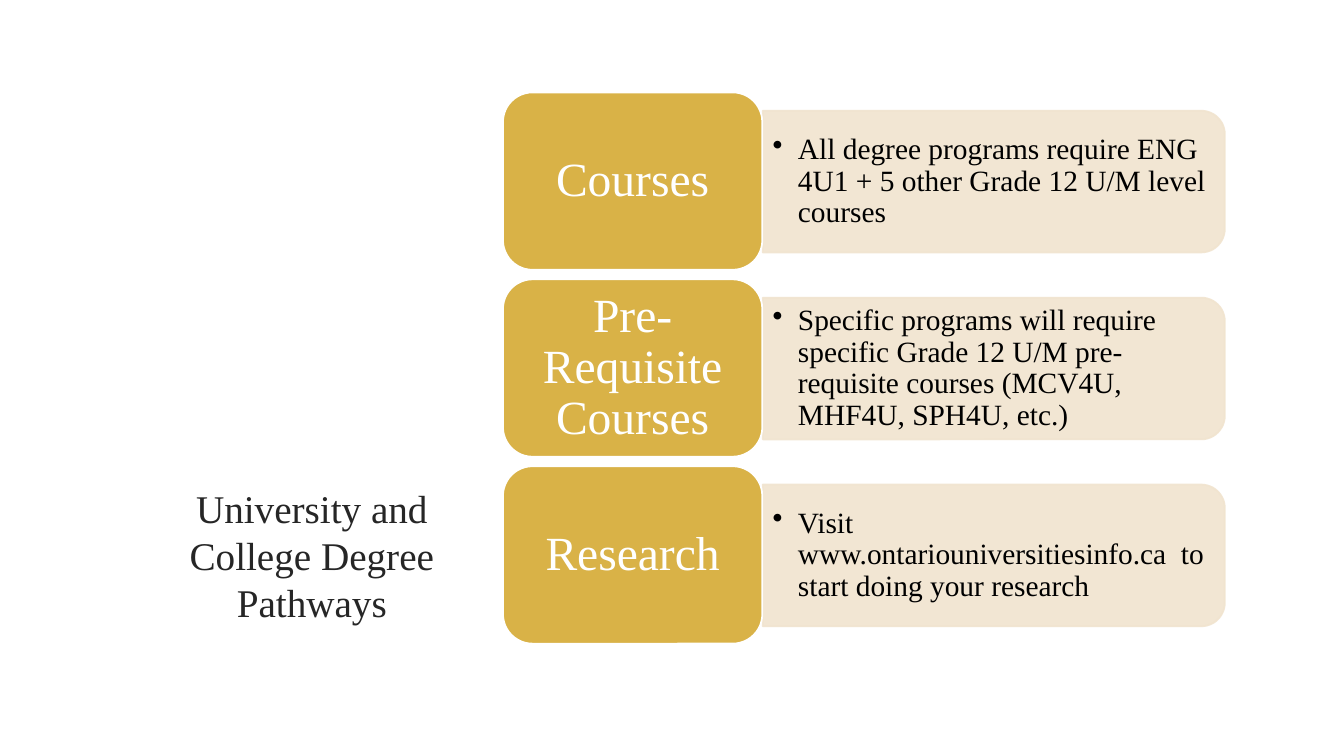
from lxml import etree
from pptx import Presentation, util as u
from pptx.dml.color import RGBColor
from pptx.enum import shapes, text
from pptx.oxml.ns import qn

PX = 9525
ROWS = [
    ("Courses", "All degree programs require ENG 4U1 + 5 other Grade 12 U/M level courses"),
    ("Pre-Requisite Courses", "Specific programs will require specific Grade 12 U/M pre-requisite "
                              "courses (MCV4U, MHF4U, SPH4U, etc.)"),
    ("Research", "Visit www.ontariouniversitiesinfo.ca  to start doing your research"),
]


def colour(value):
    return RGBColor.from_string(value)


class PathwaySlide:
    """Draws the parts of the pathways slide in one shared style."""

    font = "Times New Roman"
    gold, sand, white, ink, black = "D9B247", "F1E4CF", "FFFFFF", "262626", "000000"

    def __init__(self, slide):
        self.slide = slide

    def box(self, *place):
        return self.slide.shapes.add_textbox(*(n * PX for n in place))

    def shape(self, kind, fill, line, *place):
        shape = self.slide.shapes.add_shape(kind, *(n * PX for n in place))
        shape.shadow.inherit = False
        shape.fill.solid()
        shape.fill.fore_color.rgb = colour(fill)
        shape.line.color.rgb = colour(line)
        shape.line.width = u.Pt(1.25)
        return shape

    def put_text(self, shape, words, size, ink, anchor, align, insets, spacing=None, bullet=False):
        frame = shape.text_frame
        frame.text = words
        frame.word_wrap = True
        frame.vertical_anchor = anchor
        across, down = (n * PX for n in insets)
        frame.margin_left = frame.margin_right = across
        frame.margin_top = frame.margin_bottom = down
        paragraph = frame.paragraphs[0]
        paragraph.alignment = align
        if spacing:
            paragraph.line_spacing = spacing
        if bullet:
            properties = paragraph._p.get_or_add_pPr()
            properties.set("marL", str(24 * PX))
            properties.set("indent", str(-24 * PX))
            etree.SubElement(properties, qn("a:buChar")).set("char", "•")
        font = paragraph.runs[0].font
        font.name = self.font
        font.size = u.Pt(size)
        font.color.rgb = colour(ink)

    def title(self, words, *place):
        self.put_text(self.box(*place), words, 28, self.ink, text.MSO_ANCHOR.BOTTOM,
                      text.PP_ALIGN.CENTER, (10, 5))

    def panel(self, middle):
        width, length = 135, 440
        panel = self.shape(shapes.MSO_SHAPE.ROUND_2_SAME_RECTANGLE, self.sand, self.sand,
                           946 - width // 2, middle - length // 2, width, length)
        panel.rotation = 90
        for tint in panel._element.spPr.iter(qn("a:srgbClr")):
            etree.SubElement(tint, qn("a:alpha")).set("val", "90000")

    def detail(self, words, middle):
        self.put_text(self.box(727, middle - 61, 433, 122), words, 21, self.black,
                      text.MSO_ANCHOR.MIDDLE, text.PP_ALIGN.LEFT, (9, 4), 0.9, True)

    def label(self, words, middle):
        label = self.shape(shapes.MSO_SHAPE.ROUNDED_RECTANGLE, self.gold, self.white,
                           479, middle - 85, 247, 169)
        self.put_text(label, words, 34, self.white, text.MSO_ANCHOR.MIDDLE,
                      text.PP_ALIGN.CENTER, (13, 7), 0.9)


def main():
    deck = Presentation()
    deck.slide_width, deck.slide_height = 1280 * PX, 720 * PX
    pathways = PathwaySlide(deck.slides.add_slide(deck.slide_layouts[6]))
    pathways.title("University and College Degree Pathways", 136, 100, 322, 501)
    for row, (heading, advice) in enumerate(ROWS):
        middle = 173 + row * 178
        pathways.panel(middle)
        pathways.detail(advice, middle)
        pathways.label(heading, middle)
    deck.save("out.pptx")


if __name__ == "__main__":
    main()
